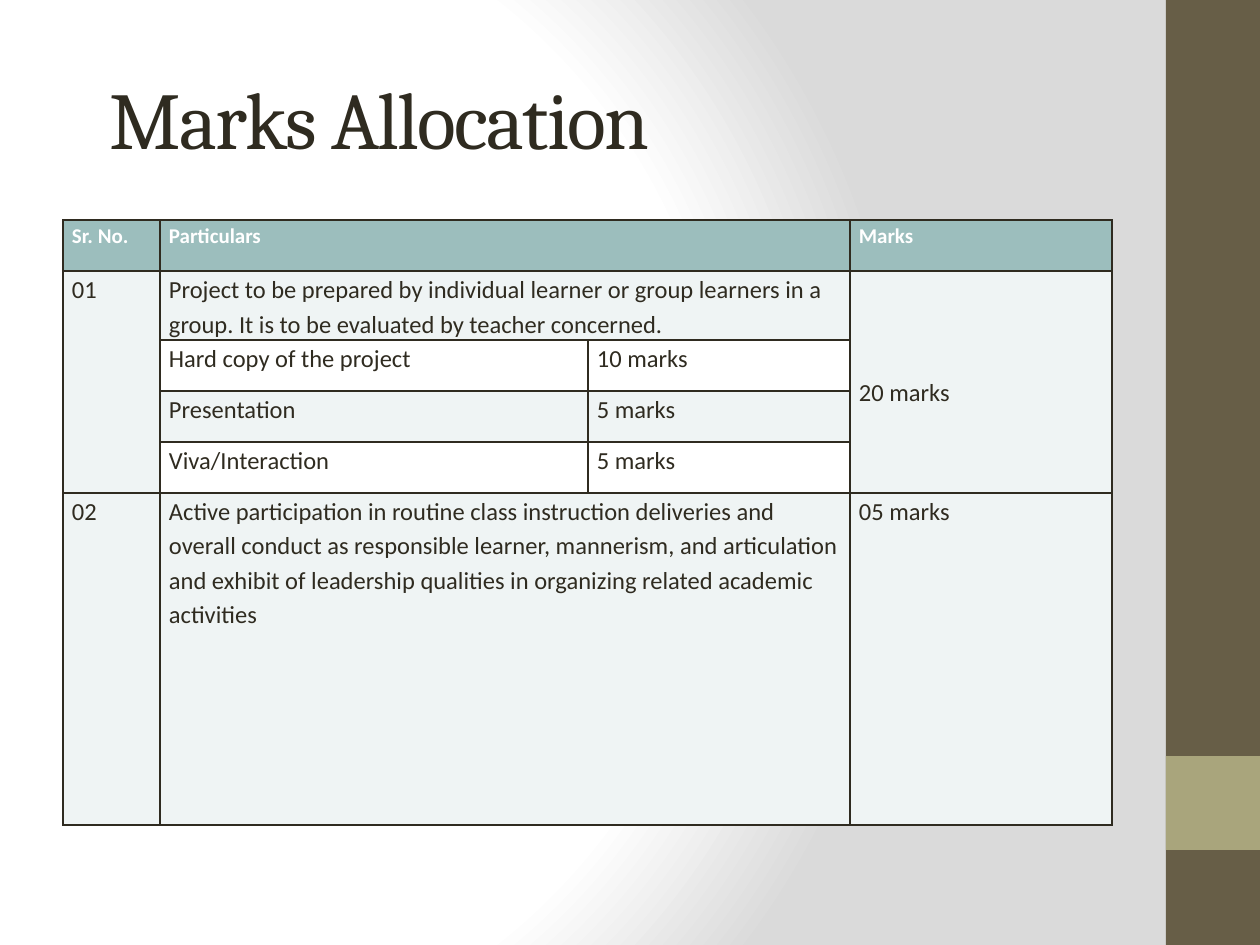
from dataclasses import dataclass
from itertools import product

from pptx import Presentation
from pptx.dml.color import RGBColor
from pptx.enum import shapes, text
from pptx.oxml import parse_xml
from pptx.oxml.ns import nsdecls
from pptx.util import Pt


@dataclass(frozen=True)
class Theme:
    ink: str = "2F2B20"
    sidebar: str = "675E47"
    accent: str = "A9A57C"
    header: str = "9CBEBD"
    tint: str = "EFF4F4"
    white: str = "FFFFFF"
    shade: str = "DADADA"
    heading_font: str = "Cambria"
    body_font: str = "Calibri"
    title_size: int = 46
    header_size: int = 12
    body_size: int = 14


THEME = Theme()
SCALE = 914400 / 126
COLUMNS = [97, 428, 262, 262]
ROWS = [51, 69, 51, 51, 51, 332]
MERGES = [((0, 1), (0, 2)), ((1, 0), (4, 0)), ((1, 1), (1, 2)),
          ((1, 3), (4, 3)), ((5, 1), (5, 2))]
WHITE_ROWS = (2, 4)
MARKS = [
    ["Sr. No.", "Particulars", "", "Marks"],
    ["01", "Project to be prepared by individual learner or group learners in a "
     "group. It is to be evaluated by teacher concerned.", "", "20 marks"],
    ["", "Hard copy of the project", "10 marks", ""],
    ["", "Presentation", "5 marks", ""],
    ["", "Viva/Interaction", "5 marks", ""],
    ["02", "Active participation in routine class instruction deliveries and "
     "overall conduct as responsible learner, mannerism, and articulation and "
     "exhibit of leadership qualities in organizing related academic activities",
     "", "05 marks"],
]


def px(length):
    return round(length * SCALE)


def apply(target, settings):
    for key, value in settings.items():
        setattr(target, key, value)


def paint(fill, color):
    fill.solid()
    fill.fore_color.rgb = RGBColor.from_string(color)


def write(frame, wording, font, size, color, bold=False, spacing=1.0):
    paragraph = frame.paragraphs[0]
    paragraph.line_spacing = spacing
    run = paragraph.add_run()
    run.text = wording
    apply(run.font, {"name": font, "size": Pt(size), "bold": bold})
    run.font.color.rgb = RGBColor.from_string(color)
    return run


def set_background(slide):
    stops = "".join(
        f'<a:gs pos="{position}"><a:srgbClr val="{color}"/></a:gs>'
        for position, color in
        [(0, THEME.white), (75000, THEME.white), (100000, THEME.shade)])
    slide._element.cSld.insert(0, parse_xml(
        f'<p:bg {nsdecls("p", "a")}><p:bgPr><a:gradFill rotWithShape="1">'
        f'<a:gsLst>{stops}</a:gsLst><a:path path="circle">'
        '<a:fillToRect l="20000" t="50000" r="100000" b="50000"/></a:path>'
        '</a:gradFill><a:effectLst/></p:bgPr></p:bg>'))


def add_band(slide, box, color):
    band = slide.shapes.add_shape(shapes.MSO_SHAPE.RECTANGLE, *map(px, box))
    band.shadow.inherit = False
    paint(band.fill, color)
    band.line.fill.background()


def add_title(slide, wording, box):
    frame = slide.shapes.add_textbox(*map(px, box)).text_frame
    apply(frame, {"word_wrap": True, "margin_left": px(47),
                  "vertical_anchor": text.MSO_ANCHOR.MIDDLE})
    run = write(frame, wording, THEME.heading_font, THEME.title_size, THEME.ink)
    run.font._element.set("spc", "-100")


def add_borders(cell):
    properties = cell._tc.get_or_add_tcPr()
    for index, side in enumerate(("lnL", "lnR", "lnT", "lnB")):
        properties.insert(index, parse_xml(
            f'<a:{side} {nsdecls("a")} w="{Pt(1)}"><a:solidFill>'
            f'<a:srgbClr val="{THEME.ink}"/></a:solidFill></a:{side}>'))


def fill_cell(cell, row, wording):
    header = row == 0
    apply(cell, {"margin_left": px(9), "margin_right": px(9),
                 "margin_top": 0, "margin_bottom": 0})
    color = THEME.white if row in WHITE_ROWS else THEME.tint
    paint(cell.fill, THEME.header if header else color)
    add_borders(cell)
    if wording:
        write(cell.text_frame, wording, THEME.body_font,
              THEME.header_size if header else THEME.body_size,
              THEME.white if header else THEME.ink, header, 1.15)


def add_marks_table(slide, left, top):
    table = slide.shapes.add_table(
        len(ROWS), len(COLUMNS),
        *map(px, (left, top, sum(COLUMNS), sum(ROWS)))).table
    apply(table, {"first_row": False, "horz_banding": False})
    for column, width in zip(table.columns, COLUMNS):
        column.width = px(width)
    for row, height in zip(table.rows, ROWS):
        row.height = px(height)
    for start, end in MERGES:
        table.cell(*start).merge(table.cell(*end))
    for row, column in product(range(len(ROWS)), range(len(COLUMNS))):
        fill_cell(table.cell(row, column), row, MARKS[row][column])
    table.cell(1, 3).margin_top = px(103)


def main():
    deck = Presentation()
    apply(deck, {"slide_width": px(1260), "slide_height": px(945)})
    slide = deck.slides.add_slide(deck.slide_layouts[6])
    set_background(slide)
    add_band(slide, (1166, 0, 94, 945), THEME.sidebar)
    add_band(slide, (1166, 756, 94, 94), THEME.accent)
    add_title(slide, "Marks Allocation", (63, 38, 1050, 158))
    add_marks_table(slide, 63, 220)
    deck.save("out.pptx")


if __name__ == "__main__":
    main()
